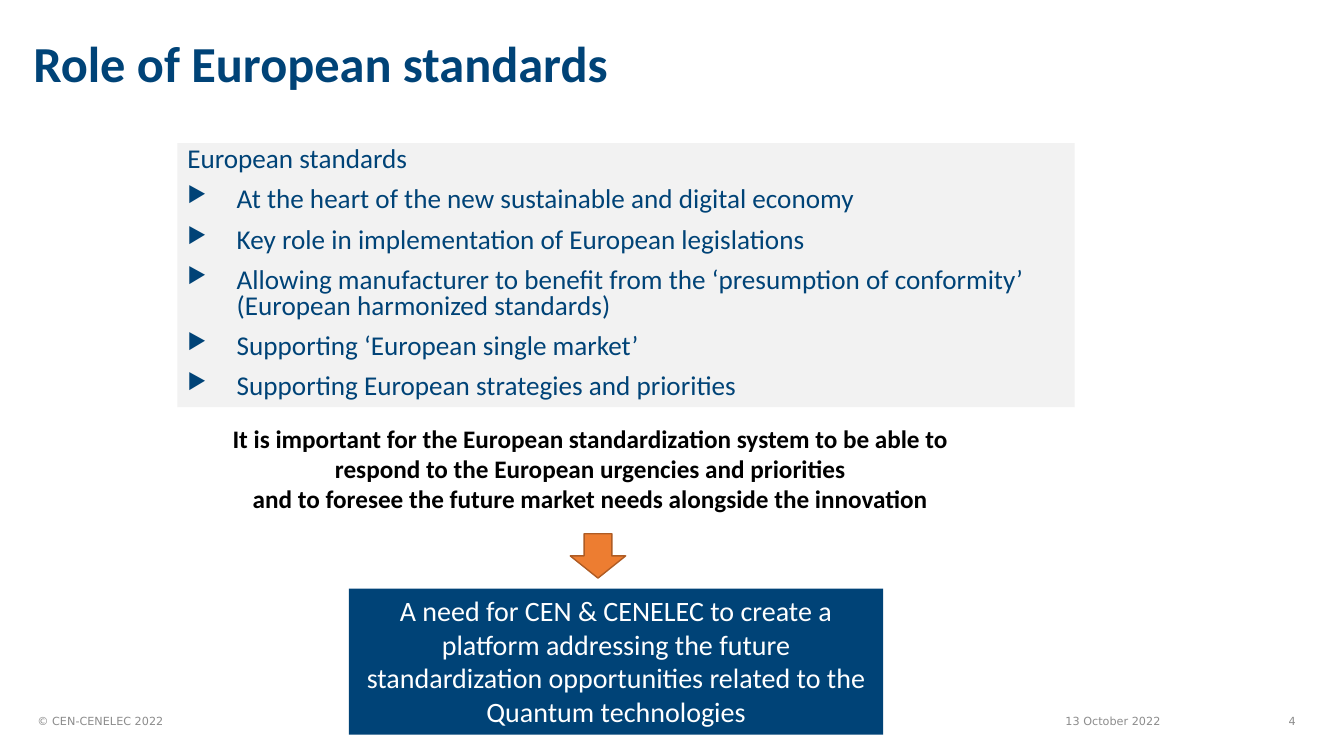
from lxml import etree
from pptx import Presentation, util as u
from pptx.dml.color import RGBColor
from pptx.enum import shapes, text
from pptx.oxml.ns import qn

NAVY, GREY, PALE, WHITE, BLACK = "004377", "8C8C8C", "F2F2F2", "FFFFFF", "000000"
ORANGE, RUST = "ED7D31", "AF5C24"
WIDTH, HEIGHT = u.Inches(13.33), u.Inches(7.5)
FOOTER_TOP, FOOTER_HEIGHT = 92.67, 5.33
LEFT, CENTER, RIGHT = text.PP_ALIGN.LEFT, text.PP_ALIGN.CENTER, text.PP_ALIGN.RIGHT
TOP, MIDDLE = text.MSO_ANCHOR.TOP, text.MSO_ANCHOR.MIDDLE

POINTS = [
    "At the heart of the new sustainable and digital economy",
    "Key role in implementation of European legislations",
    "Allowing manufacturer to benefit from the ‘presumption of conformity’ "
    "(European harmonized standards)",
    "Supporting ‘European single market’",
    "Supporting European strategies and priorities",
]
STATEMENT = [
    "It is important for the European standardization system to be able to "
    "respond to the European urgencies and priorities",
    "and to foresee the future market needs alongside the innovation",
]
NEED = ("A need for CEN & CENELEC to create a platform addressing the future "
        "standardization opportunities related to the Quantum technologies")


def color(value):
    return RGBColor.from_string(value)


def place(x, y, w, h):
    """Turn percentages of the slide's size into lengths."""
    return [int(side * share / 100) for side, share in
            zip((WIDTH, HEIGHT, WIDTH, HEIGHT), (x, y, w, h))]


def write(s, lines, size, ink, bold=False, align=LEFT, anchor=TOP, face="Calibri"):
    tf = s.text_frame
    tf.word_wrap = True
    tf.auto_size = text.MSO_AUTO_SIZE.NONE
    tf.vertical_anchor = anchor
    for i, line in enumerate(lines):
        p = tf.paragraphs[0] if i == 0 else tf.add_paragraph()
        p.text = line
        p.alignment = align
        p.font.size, p.font.bold, p.font.name = u.Pt(size), bold, face
        p.font.color.rgb = color(ink)
    return tf


def add_block(slide, kind, box, fill, line=None):
    s = slide.shapes.add_shape(kind, *place(*box))
    s.shadow.inherit = False
    s.fill.solid()
    s.fill.fore_color.rgb = color(fill)
    if line:
        s.line.color.rgb = color(line)
        s.line.width = u.Pt(1)
    else:
        s.line.fill.background()
    return s


def add_text(slide, box, lines, size, ink, **style):
    return write(slide.shapes.add_textbox(*place(*box)), lines, size, ink, **style)


def add_footer(slide, x, w, line, align=LEFT):
    return add_text(slide, (x, FOOTER_TOP, w, FOOTER_HEIGHT), [line], 8, GREY,
                    align=align, anchor=MIDDLE, face="DejaVu Sans")


def add_bullet(p):
    pPr = p._p.get_or_add_pPr()
    pPr.set("marL", str(u.Inches(0.49)))
    pPr.set("indent", str(-u.Inches(0.49)))
    size = etree.Element(qn("a:buSzPct"), val="80000")
    mark = etree.Element(qn("a:buChar"), char="▶")
    font = pPr.find(qn("a:defRPr"))
    font.addprevious(size)
    font.addprevious(mark)


def main():
    prs = Presentation()
    prs.slide_width, prs.slide_height = WIDTH, HEIGHT
    slide = prs.slides.add_slide(prs.slide_layouts[5])

    # Title
    title = slide.shapes.title
    title.left, title.top, title.width, title.height = place(1.73, 3.2, 74.94, 11.2)
    tf = write(title, ["Role of European standards"], 36, NAVY, bold=True, anchor=MIDDLE)
    tf.paragraphs[0].line_spacing = 0.9

    # Panel with the roles
    panel = add_block(slide, shapes.MSO_SHAPE.RECTANGLE, (13.2, 18.93, 66.77, 34.93), PALE)
    tf = write(panel, ["European standards"] + POINTS, 19.4, NAVY)
    for p in tf.paragraphs:
        p.line_spacing = 0.8
    for p in tf.paragraphs[1:]:
        p.space_before = u.Pt(10)
        add_bullet(p)

    # Statement, arrow and resulting need
    add_text(slide, (15.23, 55.33, 57.39, 17.47), STATEMENT, 18, BLACK,
             bold=True, align=CENTER)
    arrow = add_block(slide, shapes.MSO_SHAPE.RIGHT_ARROW, (42.84, 69.87, 3.3, 7.33),
                      ORANGE, RUST)
    arrow.rotation = 90
    need = add_block(slide, shapes.MSO_SHAPE.RECTANGLE, (25.96, 77.87, 39.76, 19.33), NAVY)
    write(need, [NEED], 20, WHITE, align=CENTER)

    # Footer
    tf = add_footer(slide, 1.73, 12.83, "© CEN-CENELEC 2022")
    tf.margin_left = u.Inches(0.14)
    add_footer(slide, 78.54, 11.1, "13 October 2022")
    add_footer(slide, 90.47, 6.68, "4", RIGHT)

    prs.save("out.pptx")


if __name__ == "__main__":
    main()
